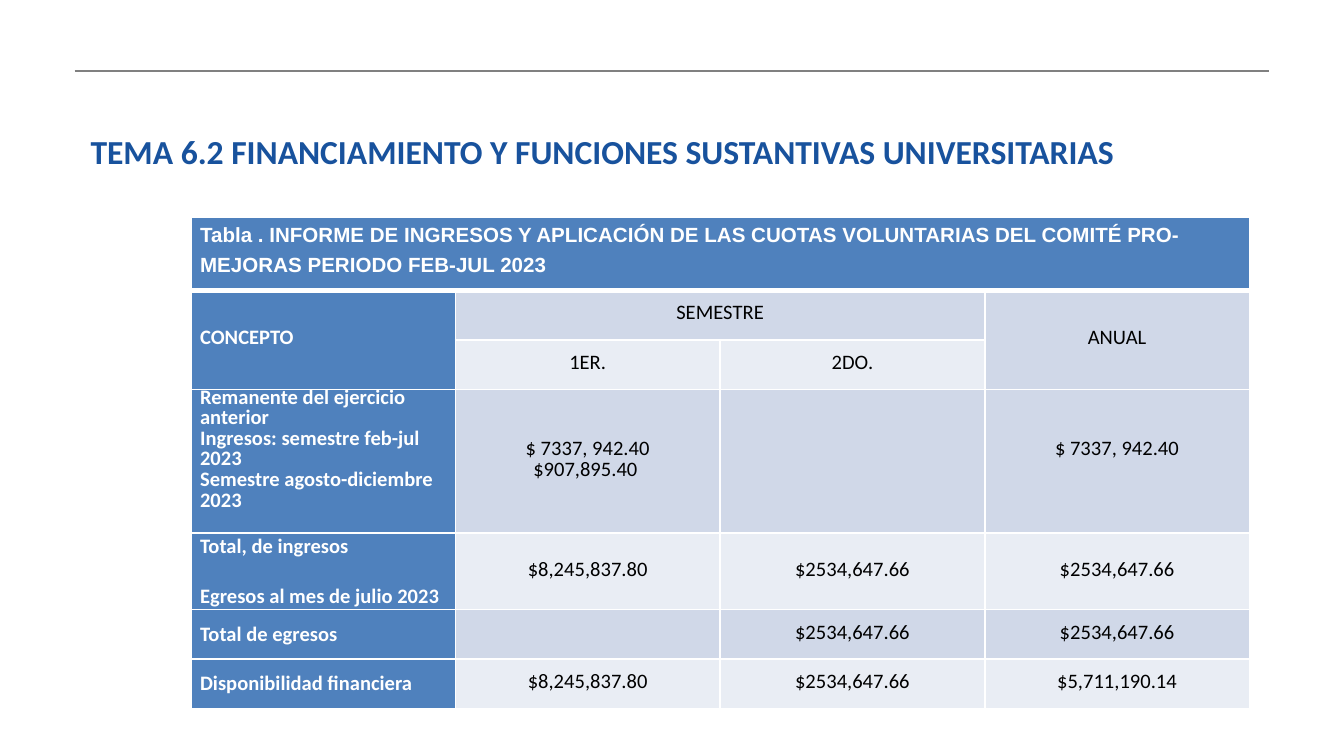
from dataclasses import dataclass

from lxml.etree import SubElement
from pptx import Presentation
from pptx.dml.color import RGBColor as RGB
from pptx.enum.shapes import MSO_CONNECTOR as Connector
from pptx.enum.text import MSO_ANCHOR as Anchor, PP_ALIGN as Align
from pptx.oxml import parse_xml
from pptx.oxml.ns import nsdecls, qn
from pptx.util import Pt


@dataclass(frozen=True)
class Theme:
    title: str = "18529D"
    rule: str = "808080"
    header: str = "4F81BD"
    band_dark: str = "D0D8E8"
    band_light: str = "E9EDF4"
    white: str = "FFFFFF"
    black: str = "000000"
    body_font: str = "Calibri"
    caption_font: str = "Arial"
    title_size: int = 18
    table_size: int = 11


CAPTION = ("Tabla . INFORME DE INGRESOS Y APLICACIÓN DE LAS CUOTAS VOLUNTARIAS "
           "DEL COMITÉ PRO- MEJORAS PERIODO FEB-JUL 2023")
ROWS = [
    [CAPTION, "", "", ""],
    ["CONCEPTO", "SEMESTRE", "", "ANUAL"],
    ["", "1ER.", "2DO.", ""],
    ["Remanente del ejercicio anterior\nIngresos: semestre feb-jul 2023\n"
     "Semestre agosto-diciembre 2023", "$ 7337, 942.40\n$907,895.40 ", "", "$ 7337, 942.40"],
    ["Total, de ingresos\nEgresos al mes de julio 2023",
     "$8,245,837.80", "$2534,647.66", "$2534,647.66"],
    ["Total de egresos", "", "$2534,647.66", "$2534,647.66"],
    ["Disponibilidad financiera", "$8,245,837.80", "$2534,647.66", "$5,711,190.14"],
]
ROW_HEIGHTS = [39.5, 26.5, 26.5, 55.5, 41, 26.5, 26.5]
COLUMN_WIDTH = 141.8
MERGES = [((0, 0), (0, 3)), ((1, 0), (2, 0)), ((1, 1), (1, 2)), ((1, 3), (2, 3))]
CAPTION_ROW, INCOME_ROW, TOTAL_ROW = 0, 3, 4


class SlideBuilder:
    def __init__(self, slide, theme):
        self.slide = slide
        self.theme = theme

    def style(self, para, font, size, color, bold):
        for run in para.runs:
            run.font.name = font
            run.font.size = Pt(size)
            run.font.bold = bold
            run.font.color.rgb = RGB.from_string(color)

    def rule(self, left, right, y):
        line = self.slide.shapes.add_connector(
            Connector.STRAIGHT, Pt(left), Pt(y), Pt(right), Pt(y))
        line.line.color.rgb = RGB.from_string(self.theme.rule)
        line.line.width = Pt(0.75)
        SubElement(line._element.spPr, qn("a:effectLst"))

    def title(self, text, left, top, width, height):
        box = self.slide.shapes.title
        box.left, box.top, box.width, box.height = map(Pt, (left, top, width, height))
        frame = box.text_frame
        frame.text = text
        frame.word_wrap = True
        frame.vertical_anchor = Anchor.MIDDLE
        frame.margin_left = frame.margin_right = Pt(6)
        frame.margin_top = frame.margin_bottom = Pt(3)
        para = frame.paragraphs[0]
        para.alignment = Align.LEFT
        self.style(para, self.theme.body_font, self.theme.title_size, self.theme.title, True)

    def borders(self, cell, top, bottom):
        properties = cell._tc.get_or_add_tcPr()
        sides = (("L", 1), ("R", 1), ("T", top), ("B", bottom))
        for index, (side, width) in enumerate(sides):
            properties.insert(index, parse_xml(
                f'<a:ln{side} {nsdecls("a")} w="{Pt(width)}"><a:solidFill>'
                f'<a:srgbClr val="{self.theme.white}"/></a:solidFill></a:ln{side}>'))

    def cell(self, cell, text, row, column):
        theme = self.theme
        is_caption = row == CAPTION_ROW
        is_header = is_caption or column == 0
        band = theme.band_dark if row % 2 else theme.band_light
        cell.fill.solid()
        cell.fill.fore_color.rgb = RGB.from_string(theme.header if is_header else band)
        self.borders(cell, 3 if row == 1 else 1, 3 if is_caption else 1)
        cell.margin_left = cell.margin_right = Pt(5)
        cell.margin_top = cell.margin_bottom = Pt(0)
        cell.vertical_anchor = Anchor.TOP if is_caption else Anchor.MIDDLE
        cell.text_frame.text = text
        for para in cell.text_frame.paragraphs:
            para.alignment = Align.LEFT if is_header else Align.CENTER
            if is_caption:
                para.line_spacing = Pt(16)
            elif column or row < TOTAL_ROW:
                para.line_spacing = Pt(11)
            self.style(para, theme.caption_font if is_caption else theme.body_font,
                       theme.table_size, theme.white if is_header else theme.black, is_header)

    def table(self, rows, left, top):
        columns = len(rows[0])
        table = self.slide.shapes.add_table(
            len(rows), columns, Pt(left), Pt(top),
            Pt(COLUMN_WIDTH * columns), Pt(sum(ROW_HEIGHTS))).table
        for column in table.columns:
            column.width = Pt(COLUMN_WIDTH)
        for row, height in zip(table.rows, ROW_HEIGHTS):
            row.height = Pt(height)
        for row, texts in enumerate(rows):
            for column, text in enumerate(texts):
                self.cell(table.cell(row, column), text, row, column)
        for first, last in MERGES:
            table.cell(*first).merge(table.cell(*last))
        return table


def main():
    deck = Presentation()
    deck.slide_width, deck.slide_height = Pt(720), Pt(405)
    page = SlideBuilder(deck.slides.add_slide(deck.slide_layouts[5]), Theme())
    page.rule(40, 680, 38)
    page.title("TEMA 6.2 FINANCIAMIENTO Y FUNCIONES SUSTANTIVAS UNIVERSITARIAS",
               42.5, 60.5, 630, 40.5)
    table = page.table(ROWS, 102.2, 116.2)
    for column in (0, 3):
        table.cell(INCOME_ROW, column).margin_bottom = Pt(11)
    table.cell(TOTAL_ROW, 0).text_frame.paragraphs[1].space_before = Pt(13.5)
    deck.save("out.pptx")


if __name__ == "__main__":
    main()
